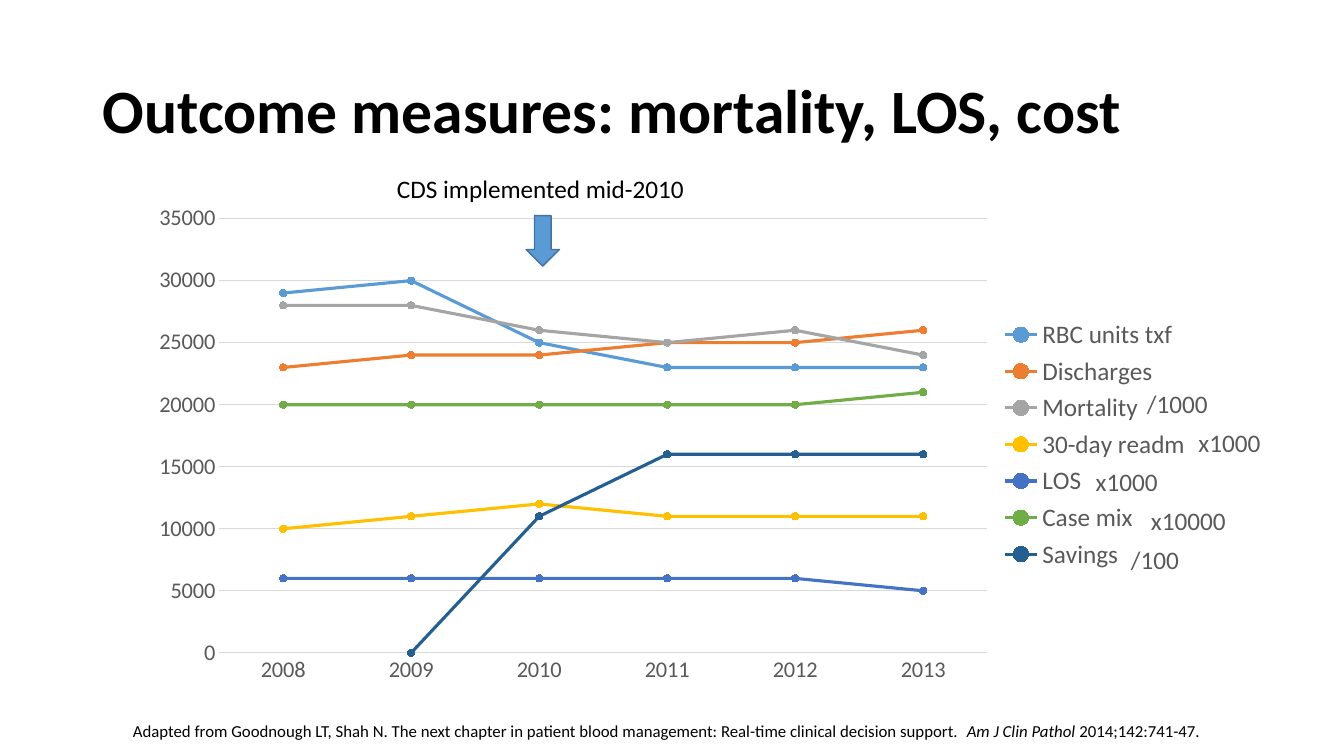
from lxml import etree
from pptx import Presentation
from pptx.chart.data import CategoryChartData
from pptx.dml.color import RGBColor
from pptx.enum.chart import XL_CHART_TYPE, XL_LEGEND_POSITION, XL_MARKER_STYLE, XL_TICK_MARK
from pptx.enum.shapes import MSO_SHAPE
from pptx.enum.text import MSO_ANCHOR, MSO_AUTO_SIZE, PP_ALIGN
from pptx.oxml.ns import qn
from pptx.util import Inches, Pt

BLACK = RGBColor(0x00, 0x00, 0x00)
GREY = RGBColor(0x59, 0x59, 0x59)
GRID = RGBColor(0xD9, 0xD9, 0xD9)
BLUE = RGBColor(0x5B, 0x9B, 0xD5)
ARROW_EDGE = RGBColor(0x43, 0x73, 0x9E)
ORANGE = RGBColor(0xED, 0x7D, 0x31)
SILVER = RGBColor(0xA5, 0xA5, 0xA5)
GOLD = RGBColor(0xFF, 0xC0, 0x00)
INDIGO = RGBColor(0x44, 0x72, 0xC4)
GREEN = RGBColor(0x70, 0xAD, 0x47)
NAVY = RGBColor(0x25, 0x5E, 0x91)

WIDTH, HEIGHT = Inches(13.33), Inches(7.5)
YEARS = ["2008", "2009", "2010", "2011", "2012", "2013"]
SERIES = [
    ("RBC units txf", BLUE, [29000, 30000, 25000, 23000, 23000, 23000]),
    ("Discharges", ORANGE, [23000, 24000, 24000, 25000, 25000, 26000]),
    ("Mortality", SILVER, [28000, 28000, 26000, 25000, 26000, 24000]),
    ("30-day readm", GOLD, [10000, 11000, 12000, 11000, 11000, 11000]),
    ("LOS", INDIGO, [6000, 6000, 6000, 6000, 6000, 5000]),
    ("Case mix", GREEN, [20000, 20000, 20000, 20000, 20000, 21000]),
    ("Savings", NAVY, [None, 0, 11000, 16000, 16000, 16000]),
]
PLOT = (7.1, 3.5, 72.7, 89.4)
LEGEND = (81, 23, 18, 54)
SUFFIXES = [("/1000", 84.6, 6.08), ("x1000", 88.43, 6.15), ("x1000", 80.78, 6.15),
            ("x10000", 84.9, 7.13), ("/100", 83.4, 5.1)]
SUFFIX_TOP, SUFFIX_STEP = 50.67, 5.17


def box(left, top, width, height):
    """Turn percentages of the slide into lengths."""
    return (int(WIDTH * left / 100), int(HEIGHT * top / 100),
            int(WIDTH * width / 100), int(HEIGHT * height / 100))


def style_font(font, size, color, **extra):
    """Apply a font format."""
    for name, value in {"name": "Calibri", "size": Pt(size), **extra}.items():
        setattr(font, name, value)
    font.color.rgb = color


def add_title(s, text):
    """Place and format the title placeholder."""
    sp = s.shapes.title
    sp.left, sp.top, sp.width, sp.height = box(6.9, 5.33, 86.25, 19.33)
    tf = sp.text_frame
    tf.text = text
    tf.word_wrap = True
    tf.auto_size = MSO_AUTO_SIZE.NONE
    tf.vertical_anchor = MSO_ANCHOR.MIDDLE
    p = tf.paragraphs[0]
    p.alignment = PP_ALIGN.LEFT
    p.line_spacing = 0.9
    style_font(p.runs[0].font, 44, BLACK, bold=True)


def add_label(s, place, runs, size=18, color=BLACK):
    """Add a one-line text box from (text, italic) runs."""
    tf = s.shapes.add_textbox(*box(*place)).text_frame
    tf.word_wrap = False
    tf.auto_size = MSO_AUTO_SIZE.SHAPE_TO_FIT_TEXT
    for text, italic in runs:
        r = tf.paragraphs[0].add_run()
        r.text = text
        style_font(r.font, size, color, italic=italic)


def add_arrow(s, place):
    """Add the block arrow that marks the event."""
    sp = s.shapes.add_shape(MSO_SHAPE.DOWN_ARROW, *box(*place))
    sp.shadow.inherit = False
    sp.fill.solid()
    sp.fill.fore_color.rgb = BLUE
    style_line(sp.line, ARROW_EDGE, 1)


def style_line(line, color, width):
    """Apply a line colour and width."""
    line.color.rgb = color
    line.width = Pt(width)


def set_layout(parent, index, place, **target):
    """Fix a chart part at percentages of the chart."""
    for old in parent.findall(qn("c:layout")):
        parent.remove(old)
    layout = etree.Element(qn("c:layout"))
    parent.insert(index, layout)
    manual = etree.SubElement(layout, qn("c:manualLayout"))
    shares = {name: round(value / 100, 3) for name, value in zip("xywh", place)}
    for name, value in {**target, "xMode": "edge", "yMode": "edge", **shares}.items():
        etree.SubElement(manual, qn(f"c:{name}")).set("val", str(value))


def style_axis(axis):
    """Format the ticks and labels of an axis."""
    axis.major_tick_mark = axis.minor_tick_mark = XL_TICK_MARK.NONE
    style_font(axis.tick_labels.font, 16, GREY)


def add_line_chart(s, place):
    """Add the line chart of outcome measures."""
    data = CategoryChartData(number_format="General")
    data.categories = YEARS
    for name, _, values in SERIES:
        data.add_series(name, values)
    chart = s.shapes.add_chart(XL_CHART_TYPE.LINE_MARKERS, *box(*place), data).chart
    style_font(chart.font, 10, BLACK)
    chart.has_title = False
    chart.has_legend = True
    chart.legend.position = XL_LEGEND_POSITION.RIGHT
    chart.legend.include_in_layout = False
    style_font(chart.legend.font, 18, GREY)
    style_axis(chart.category_axis)
    style_line(chart.category_axis.format.line, GRID, 0.75)
    axis = chart.value_axis
    style_axis(axis)
    axis.minimum_scale, axis.maximum_scale, axis.major_unit = 0, 35000, 5000
    axis.format.line.fill.background()
    style_line(axis.major_gridlines.format.line, GRID, 0.75)
    plot = chart.plots[0]
    plot.vary_by_categories = False
    for series, (_, color, _) in zip(plot.series, SERIES):
        series.smooth = False
        style_line(series.format.line, color, 2.25)
        marker = series.marker
        marker.style, marker.size = XL_MARKER_STYLE.CIRCLE, 5
        marker.format.fill.solid()
        marker.format.fill.fore_color.rgb = color
        style_line(marker.format.line, color, 0.75)
    set_layout(plot._element.getparent(), 0, PLOT, layoutTarget="inner")
    set_layout(chart.legend._element, 1, LEGEND)


def main():
    """Build and save the slide."""
    prs = Presentation()
    prs.slide_width, prs.slide_height = WIDTH, HEIGHT
    s = prs.slides.add_slide(prs.slide_layouts[5])
    add_title(s, "Outcome measures: mortality, LOS, cost")
    add_line_chart(s, (10.73, 26.67, 78.6, 64.27))
    for i, (text, left, width) in enumerate(SUFFIXES):
        top = SUFFIX_TOP + i * SUFFIX_STEP
        add_label(s, (left, top, width, 5.33), [(text, False)], color=GREY)
    add_arrow(s, (39.15, 28.53, 2.48, 6.67))
    add_label(s, (28.8, 22.27, 23.1, 5.33), [("CDS implemented mid-2010", False)])
    add_label(s, (9.15, 94.67, 81.75, 4), [
        ("Adapted from Goodnough LT, Shah N. The next chapter in patient blood management: "
         "Real-time clinical decision support.  ", False),
        ("Am J Clin Pathol", True),
        (" 2014;142:741-47.", False)], size=12)
    prs.save("out.pptx")


if __name__ == "__main__":
    main()
